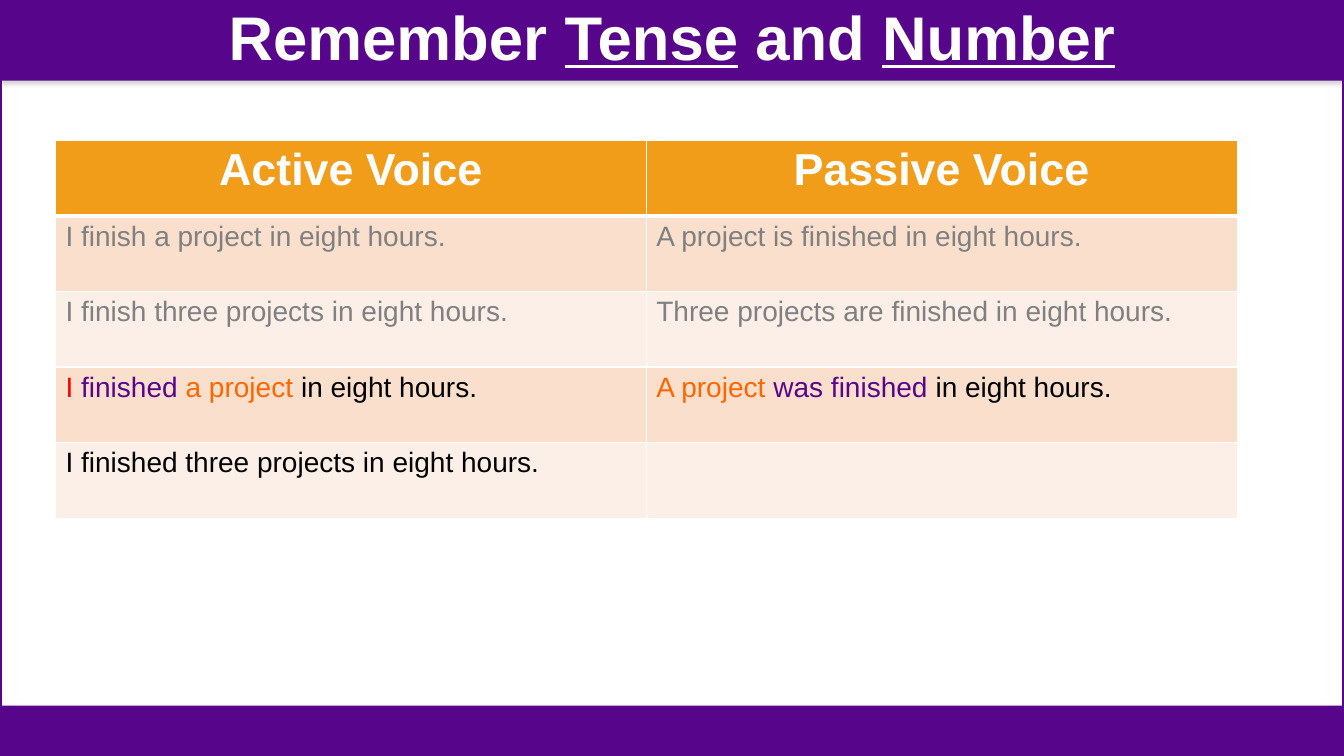
import pptx
import pptx.dml.color
import pptx.enum.shapes
import pptx.enum.text
import pptx.oxml
import pptx.oxml.ns
import pptx.util
from pptx.util import Inches

COLORS = {
    "purple": "57068C", "white": "FFFFFF", "amber": "F19D19", "peach": "FADFCC",
    "cream": "FCEFE8", "gray": "808080", "red": "FF0000", "orange": "FF6600",
    "black": "000000",
}
NAMESPACE = pptx.oxml.ns.nsdecls("a")
CENTER = pptx.enum.text.PP_ALIGN.CENTER
LEFT = pptx.enum.text.PP_ALIGN.LEFT
WIDTH, HEIGHT, TITLE_HEIGHT, FOOTER_HEIGHT = 13.33, 7.5, 0.8, 0.5


def rgb(color):
    return pptx.dml.color.RGBColor.from_string(COLORS[color])


class SlideBuilder:
    font_name = "Arial"

    def __init__(self, slide):
        self.slide = slide

    def rectangle(self, left, top, width, height, fill=None, line=None):
        shape = self.slide.shapes.add_shape(
            pptx.enum.shapes.MSO_SHAPE.RECTANGLE,
            Inches(left), Inches(top), Inches(width), Inches(height))
        shape.shadow.inherit = False
        if fill:
            shape.fill.solid()
            shape.fill.fore_color.rgb = rgb(fill)
        else:
            shape.fill.background()
        if line:
            shape.line.color.rgb = rgb(line)
            shape.line.width = pptx.util.Pt(2.25)
        else:
            shape.line.fill.background()
        return shape

    def band(self, top, height):
        shape = self.rectangle(0, top, WIDTH, height, fill="purple")
        effects = shape._element.spPr.find(pptx.oxml.ns.qn("a:effectLst"))
        effects.append(pptx.oxml.parse_xml(
            f'<a:outerShdw {NAMESPACE} blurRad="{pptx.util.Pt(3.1)}" '
            f'dist="{pptx.util.Pt(1.8)}" dir="5400000" rotWithShape="0">'
            f'<a:srgbClr val="{COLORS["gray"]}"><a:alpha val="35000"/></a:srgbClr>'
            '</a:outerShdw>'))

    def add_spans(self, para, spans, size, bold=False, align=LEFT):
        para.alignment = align
        para.font.size = pptx.util.Pt(size)
        for text, color, underline in spans:
            span = para.add_run()
            span.text = text
            span.font.name = self.font_name
            span.font.size = pptx.util.Pt(size)
            span.font.bold = bold
            span.font.underline = underline
            span.font.color.rgb = rgb(color)

    def title(self, spans):
        box = self.slide.shapes.add_textbox(0, 0, Inches(WIDTH), Inches(TITLE_HEIGHT))
        frame = box.text_frame
        frame.word_wrap = True
        frame.vertical_anchor = pptx.enum.text.MSO_ANCHOR.MIDDLE
        para = frame.paragraphs[0]
        para.line_spacing = 0.9
        self.add_spans(para, spans, 44, True, CENTER)

    def style_cell(self, cell, fill, top_width, bottom_width):
        properties = cell._tc.get_or_add_tcPr()
        for side, points in zip("LRTB", (1, 1, top_width, bottom_width)):
            properties.append(pptx.oxml.parse_xml(
                f'<a:ln{side} {NAMESPACE} w="{pptx.util.Pt(points)}"><a:solidFill>'
                f'<a:srgbClr val="{COLORS["white"]}"/></a:solidFill></a:ln{side}>'))
        cell.fill.solid()
        cell.fill.fore_color.rgb = rgb(fill)

    def table(self, left, top, column_width, row_height, rows):
        columns = len(rows[0])
        table = self.slide.shapes.add_table(
            len(rows), columns, Inches(left), Inches(top),
            Inches(column_width * columns), Inches(row_height * len(rows))).table
        for column in table.columns:
            column.width = Inches(column_width)
        for row_index, row in enumerate(rows):
            table.rows[row_index].height = Inches(row_height)
            header = row_index == 0
            fill = "amber" if header else ("cream", "peach")[row_index % 2]
            for column_index, spans in enumerate(row):
                cell = table.cell(row_index, column_index)
                self.style_cell(cell, fill, 3 if row_index == 1 else 1, 3 if header else 1)
                self.add_spans(cell.text_frame.paragraphs[0], spans,
                               32 if header else 20, header, CENTER if header else LEFT)


def plain(text, color):
    return [(text, color, False)]


VOICE_ROWS = [
    [plain("Active Voice", "white"), plain("Passive Voice", "white")],
    [plain("I finish a project in eight hours.", "gray"),
     plain("A project is finished in eight hours.", "gray")],
    [plain("I finish three projects in eight hours.", "gray"),
     plain("Three projects are finished in eight hours.", "gray")],
    [plain("I ", "red") + plain("finished ", "purple")
     + plain("a project", "orange") + plain(" in eight hours.", "black"),
     plain("A project ", "orange") + plain("was finished ", "purple")
     + plain("in eight hours.", "black")],
    [plain("I finished three projects in eight hours.", "black"), []],
]


def main():
    deck = pptx.Presentation()
    deck.slide_width = Inches(WIDTH)
    deck.slide_height = Inches(HEIGHT)
    page = SlideBuilder(deck.slides.add_slide(deck.slide_layouts[6]))
    page.band(0, TITLE_HEIGHT)
    page.rectangle(0, 0, WIDTH, HEIGHT, line="purple")
    page.band(HEIGHT - FOOTER_HEIGHT, FOOTER_HEIGHT)
    page.title([("Remember ", "white", False), ("Tense", "white", True),
                (" and ", "white", False), ("Number", "white", True)])
    page.table(0.55, 1.39, 5.86, 0.75, VOICE_ROWS)
    deck.save("out.pptx")


if __name__ == "__main__":
    main()
